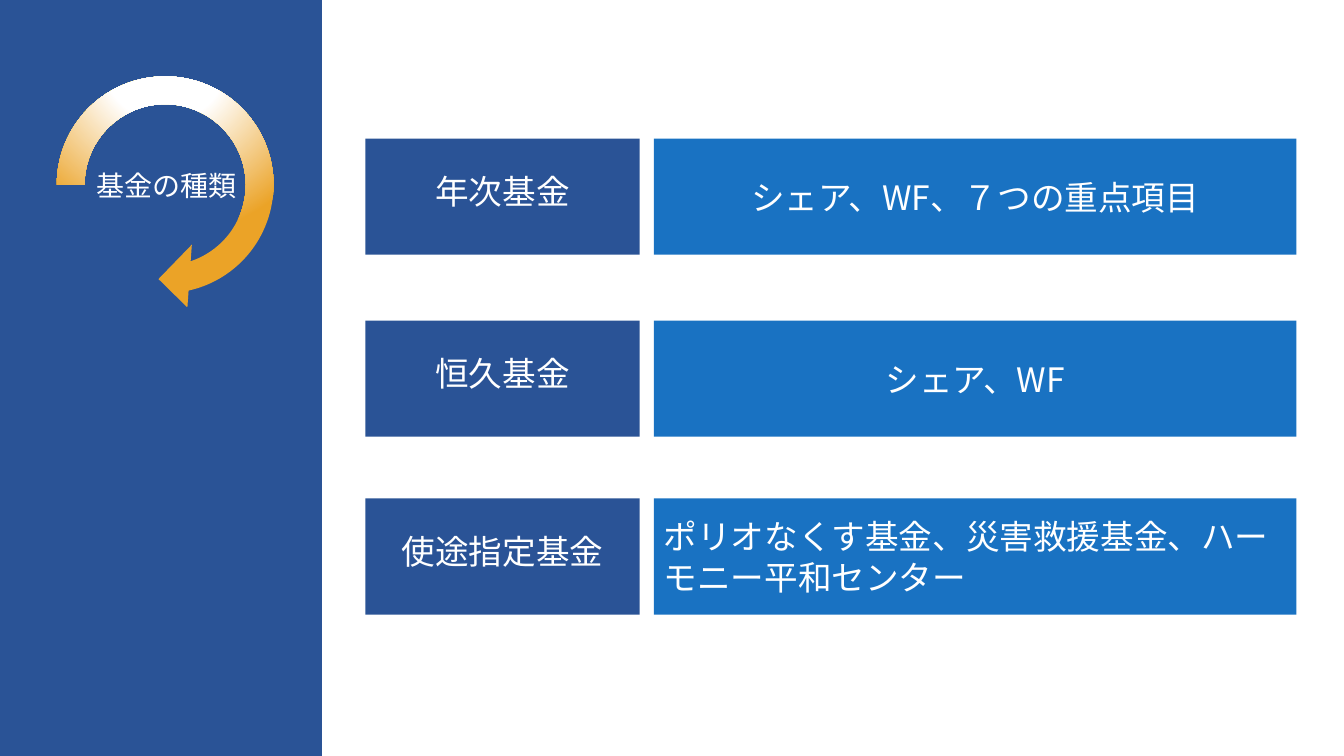
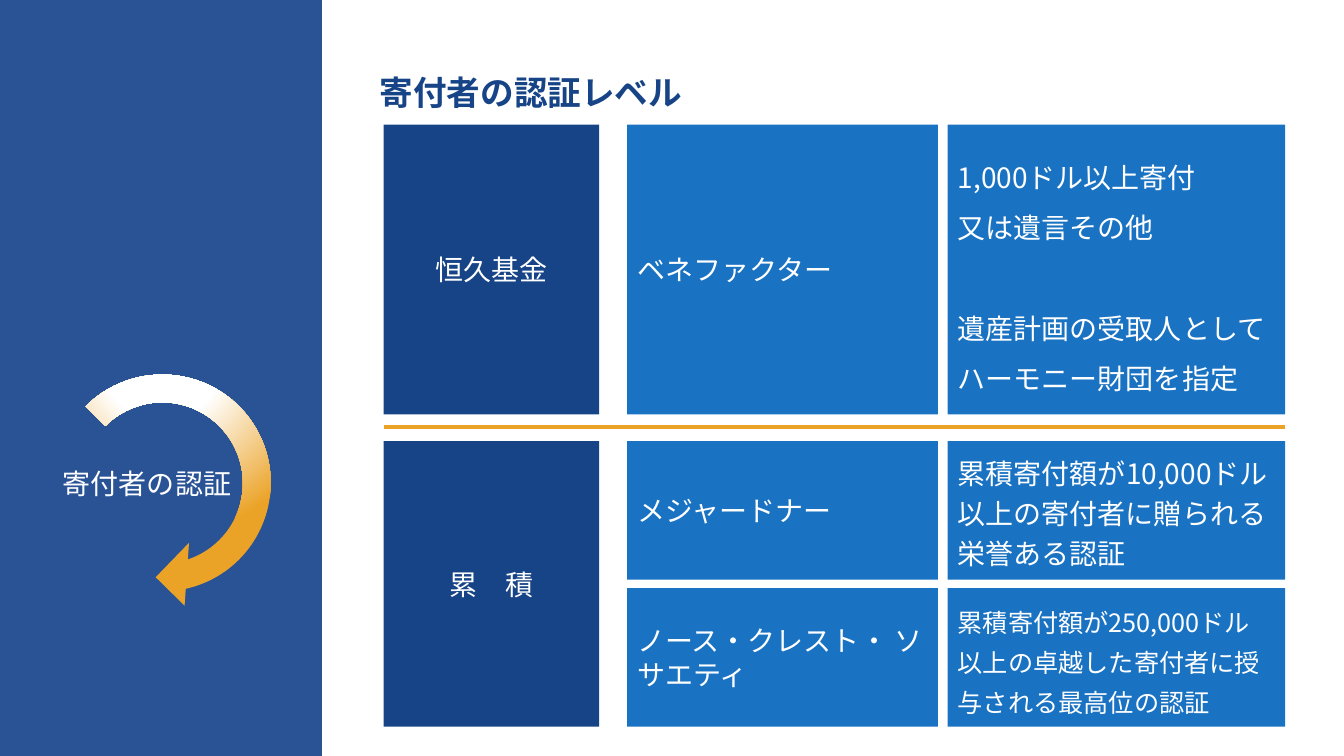
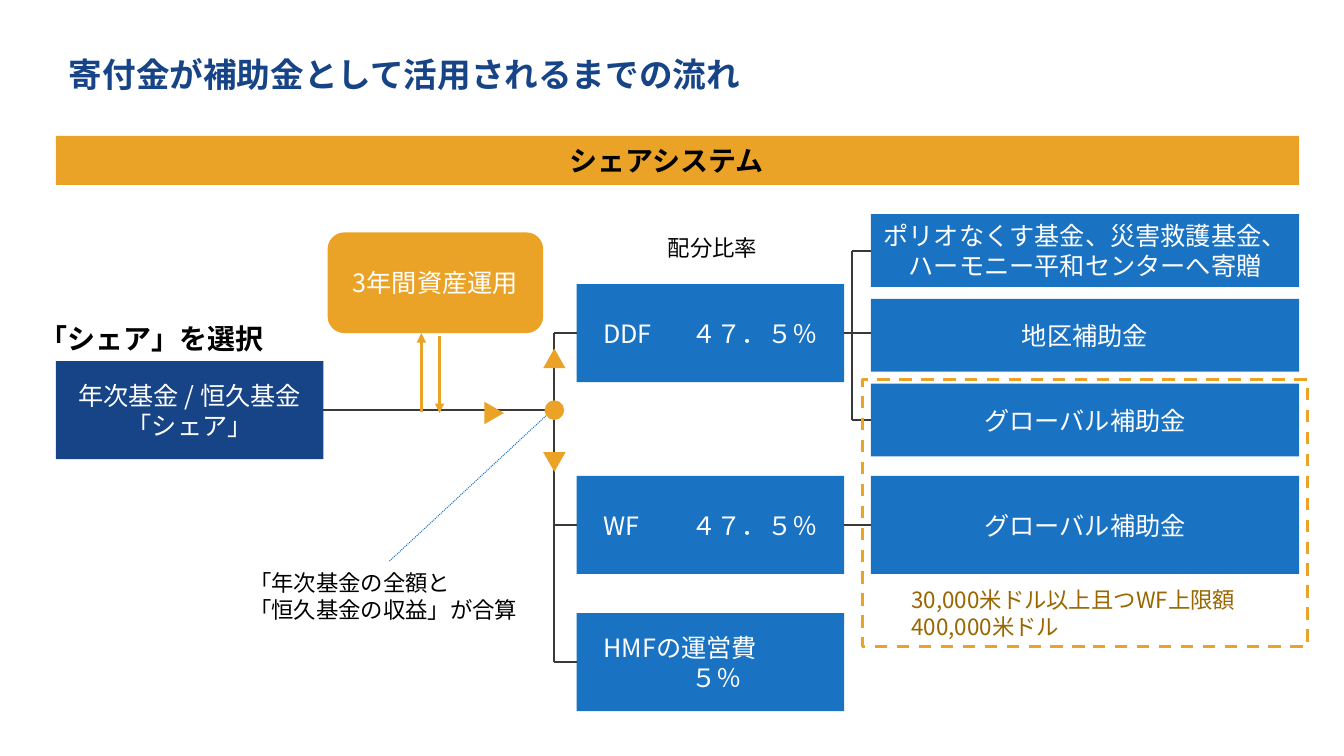
import pptx
import pptx.dml.color
import pptx.enum.dml
import pptx.enum.lang
import pptx.enum.shapes
import pptx.enum.text
import pptx.oxml
import pptx.oxml.ns
import pptx.util
import lxml.etree

Pt = pptx.util.Pt
rgb = pptx.dml.color.RGBColor.from_string
qn = pptx.oxml.ns.qn
kinds = pptx.enum.shapes.MSO_SHAPE
align = pptx.enum.text.PP_ALIGN
anchors = pptx.enum.text.MSO_ANCHOR
dashes = pptx.enum.dml.MSO_LINE

FONT = "Noto Sans CJK JP"
NAVY, SIDE, BLUE, GOLD = "174486", "2A5396", "1972C2", "EBA327"
GREY, BLACK, WHITE, BROWN = "3B3838", "000000", "FFFFFF", "996600"
LEFT, MID = align.LEFT, align.CENTER


def box(page, x, y, w, h, fill=None, kind=kinds.RECTANGLE):
    """Add a borderless preset shape, or a text box when no fill is given."""
    area = Pt(x), Pt(y), Pt(w), Pt(h)
    if fill is None:
        return page.shapes.add_textbox(*area)
    shape = page.shapes.add_shape(kind, *area)
    shape.shadow.inherit = False
    shape.fill.solid()
    shape.fill.fore_color.rgb = rgb(fill)
    shape.line.fill.background()
    return shape


def write(shape, text, size=18, color=WHITE, bold=False, side=MID,
          anchor=anchors.MIDDLE, inset=(7.2, 3.6, 7.2, 3.6), space=None, tab=None):
    """Fill a shape with text, one paragraph a line; return its text frame."""
    frame = shape.text_frame
    frame.word_wrap = True
    frame.auto_size = pptx.enum.text.MSO_AUTO_SIZE.NONE
    frame.vertical_anchor = anchor
    (frame.margin_left, frame.margin_top,
     frame.margin_right, frame.margin_bottom) = map(Pt, inset)
    for i, line in enumerate(text.split("\n")):
        para = frame.add_paragraph() if i else frame.paragraphs[0]
        para.alignment = side
        if space:
            para.line_spacing = space
        if tab:
            stops = lxml.etree.SubElement(para._p.get_or_add_pPr(), qn("a:tabLst"))
            lxml.etree.SubElement(stops, qn("a:tab"), pos=str(Pt(tab)), algn="l")
        run = para.add_run()
        run.text = line
        font = run.font
        font.size, font.bold, font.name = Pt(size), bold, FONT
        font.color.rgb = rgb(color)
        font.language_id = pptx.enum.lang.MSO_LANGUAGE_ID.JAPANESE
        lxml.etree.SubElement(run._r.get_or_add_rPr(), qn("a:ea"), typeface=FONT)
    return frame


deck = pptx.Presentation()
deck.slide_width, deck.slide_height = Pt(960), Pt(540)
funds, levels, flow = [deck.slides.add_slide(deck.slide_layouts[n]) for n in (6, 5, 5)]

# Titles
for page, x, y, w, text in [
    (levels, 264, 48, 360, "寄付者の認証レベル"),
    (flow, 42, 35, 892, "寄付金が補助金として活用されるまでの流れ"),
]:
    title = page.shapes.title
    title.left, title.top, title.width, title.height = Pt(x), Pt(y), Pt(w), Pt(36)
    write(title, text, size=24, color=NAVY, bold=True, side=LEFT)

# Side bands with their ring arrows
for page, x, y, turn, left, top, w, text in [
    (funds, 28, 42, 108, 52, 107, 134, "基金の種類"),
    (levels, 26, 255, 135, 42, 320, 126, "寄付者の認証"),
]:
    box(page, 0, 0, 230, 540, SIDE)
    ring = box(page, x, y, 180, 180, GOLD, kinds.CIRCULAR_ARROW)
    for i, value in enumerate((0.11, 11.423, 45, turn, 0.125)):
        ring.adjustments[i] = value
    stops = "".join(
        f'<a:gs pos="{pos}"><a:srgbClr val="{color}"/></a:gs>'
        for pos, color in ((0, WHITE), (35000, WHITE), (100000, GOLD)))
    fade = pptx.oxml.parse_xml(
        f'<a:gradFill {pptx.oxml.ns.nsdecls("a")}><a:gsLst>{stops}</a:gsLst>'
        '<a:path path="circle"><a:fillToRect l="50000" t="-80000" r="50000" b="180000"/>'
        '</a:path></a:gradFill>')
    props = ring._element.spPr
    props.replace(props.find(qn("a:solidFill")), fade)
    write(box(page, left, top, w, 50), text, size=20, inset=(1, 1, 1, 1))

# Slide 1: kinds of funds
for y, name, uses, side in [
    (99, "年次基金", "シェア、WF、７つの重点項目", MID),
    (229, "恒久基金", "シェア、WF", MID),
    (356, "使途指定基金", "ポリオなくす基金、災害救援基金、ハーモニー平和センター", LEFT),
]:
    write(box(funds, 261, y, 196, 83, SIDE), name, size=24, inset=(7.2, 3.6, 7.2, 12))
    write(box(funds, 467, y, 459, 83, BLUE), uses, size=24, side=side)

# Slide 2: donor levels
for y, h, text in [(89, 207, "恒久基金"), (315, 204, "累　積")]:
    write(box(levels, 274, y, 154, h, NAVY), text, size=20)
for y, h, name, note, size, space in [
    (89, 207, "ベネファクター",
     "1,000ドル以上寄付\n又は遺言その他\n遺産計画の受取人としてハーモニー財団を指定", 20, 1.5),
    (315, 99, "メジャードナー",
     "累積寄付額が10,000ドル以上の寄付者に贈られる栄誉ある認証", 20, Pt(28.5)),
    (420, 99, "ノース・クレスト・ ソサエティ",
     "累積寄付額が250,000ドル以上の卓越した寄付者に授与される最高位の認証", 18, Pt(28.5)),
]:
    write(box(levels, 448, y, 222, h, BLUE), name, size=20, side=LEFT)
    frame = write(box(levels, 677, y, 241, h, BLUE), note, size=size, side=LEFT, space=space)
    for para in frame.paragraphs[2:]:
        para.space_before = Pt(36)

# Slide 3: flow of the share system
write(box(flow, 40, 97, 888, 35, GOLD), "シェアシステム", size=20, color=BLACK,
      bold=True, inset=(7.2, 3.6, 23, 3.6))
source = box(flow, 40, 258, 191, 70, NAVY)
write(source, "年次基金 / 恒久基金\n「シェア」")
write(box(flow, 234, 166, 154, 72, GOLD, kinds.ROUNDED_RECTANGLE), "3年間資産運用")

shares = []
for y, text in [(203, "DDF\t４７．５％"), (340, "WF\t４７．５％"), (438, "HMFの運営費\n\t５％")]:
    shares.append(box(flow, 412, y, 191, 70, BLUE))
    write(shares[-1], text, side=LEFT, inset=(19, 3.6, 7.2, 3.6), tab=63)

grants = []
for y, h, text in [
    (153, 52, "ポリオなくす基金、災害救護基金、ハーモニー平和センターへ寄贈"),
    (213.5, 52, "地区補助金"),
    (274, 52, "グローバル補助金"),
    (340, 70, "グローバル補助金"),
]:
    grants.append(box(flow, 622, y, 306, h, BLUE))
    write(grants[-1], text)

for x, y, w, h, text, size, color, bold in [
    (21, 226, 208, 32, "「シェア」を選択", 20, BLACK, True),
    (171, 403, 213, 46, "「年次基金の全額と\n「恒久基金の収益」が合算", 16, BLACK, False),
    (470, 164, 99, 27, "配分比率", 16, BLACK, False),
    (644, 415, 275, 46, "30,000米ドル以上且つWF上限額400,000米ドル", 16, BROWN, False),
]:
    write(box(flow, x, y, w, h), text, size=size, color=color, bold=bold,
          side=LEFT, anchor=anchors.TOP)

# Lines: page, ends, colour, width, then joins, dash and arrowhead
ddf, wf, cost = shares
for page, x1, y1, x2, y2, color, width, more in [
    (levels, 274, 305, 918, 305, GOLD, 2.25, {}),
    (flow, 231, 293, 396, 293, GREY, 1.5, {"begin": (source, 3)}),
    (flow, 396, 238, 396, 473, GREY, 1.5, {}),
    (flow, 396, 238, 412, 238, GREY, 1.5, {"end": (ddf, 1)}),
    (flow, 396, 375, 412, 375, GREY, 1.5, {"end": (wf, 1)}),
    (flow, 396, 473, 412, 473, GREY, 1.5, {"end": (cost, 1)}),
    (flow, 608.5, 179, 608.5, 300, GREY, 1.5, {}),
    (flow, 608.5, 179, 622, 179, GREY, 1.5, {"end": (grants[0], 1)}),
    (flow, 603, 238, 622, 238, GREY, 1.5, {"begin": (ddf, 3)}),
    (flow, 608.5, 300, 622, 300, GREY, 1.5, {"end": (grants[2], 1)}),
    (flow, 603, 375, 622, 375, GREY, 1.5, {"begin": (wf, 3), "end": (grants[3], 1)}),
    (flow, 301, 294, 301, 238, GOLD, 2.25, {"head": True}),
    (flow, 314, 240, 314, 295, GOLD, 2.25, {"head": True}),
    (flow, 390, 297, 278, 401, BLUE, 0.75, {"dash": dashes.ROUND_DOT}),
]:
    link = page.shapes.add_connector(
        pptx.enum.shapes.MSO_CONNECTOR.STRAIGHT, Pt(x1), Pt(y1), Pt(x2), Pt(y2))
    link.line.color.rgb = rgb(color)
    link.line.width = Pt(width)
    if "begin" in more:
        link.begin_connect(*more["begin"])
    if "end" in more:
        link.end_connect(*more["end"])
    if "dash" in more:
        link.line.dash_style = more["dash"]
    if "head" in more:
        lxml.etree.SubElement(link.line._get_or_add_ln(), qn("a:tailEnd"), type="triangle")
    lxml.etree.SubElement(link._element.spPr, qn("a:effectLst"))

limit = box(flow, 616, 271, 318, 191, WHITE)
limit.fill.background()
limit.line.color.rgb = rgb(GOLD)
limit.line.width = Pt(2.25)
limit.line.dash_style = dashes.DASH

box(flow, 389, 286, 14, 14, GOLD, kinds.OVAL)
for x, y, turn in [(345, 288, 90), (388, 249, 0), (388, 323, 180)]:
    box(flow, x, y, 16, 14, GOLD, kinds.ISOSCELES_TRIANGLE).rotation = turn

deck.save("out.pptx")
